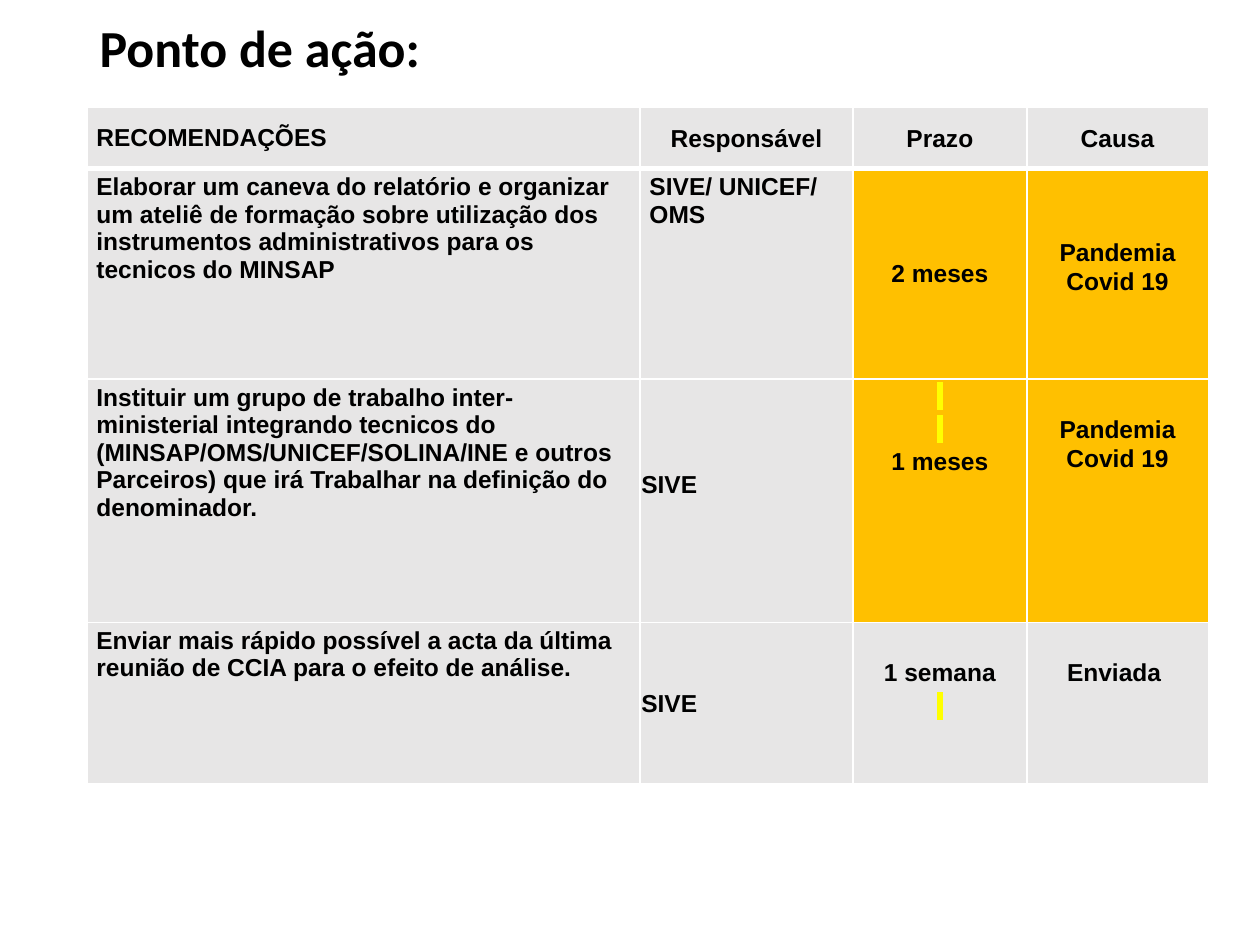
from lxml import etree
from pptx import Presentation
from pptx import util as u
from pptx.dml import color
from pptx.enum import text
from pptx.oxml import ns

COLORS = {"black": "000000", "white": "FFFFFF", "gray": "E7E6E6",
          "orange": "FFC000", "yellow": "FFFF00"}
MARK = "\N{NO-BREAK SPACE}"
LINE = 19.2
MIDDLE = text.MSO_ANCHOR.MIDDLE
TOP = text.MSO_ANCHOR.TOP


class ActionSlide:
    def __init__(self, presentation):
        self.slide = presentation.slides.add_slide(presentation.slide_layouts[5])

    def style_font(self, font, name, size):
        font.name = name
        font.size = u.Pt(size)
        font.bold = True
        font.color.rgb = color.RGBColor.from_string(COLORS["black"])

    def title(self, wording, left, top, width, height):
        shape = self.slide.shapes.title
        shape.left, shape.top = u.Pt(left), u.Pt(top)
        shape.width, shape.height = u.Pt(width), u.Pt(height)
        frame = shape.text_frame
        frame.text = wording
        frame.vertical_anchor = MIDDLE
        paragraph = frame.paragraphs[0]
        paragraph.alignment = text.PP_ALIGN.LEFT
        paragraph.line_spacing = 0.9
        self.style_font(paragraph.runs[0].font, "Calibri", 29.7)

    def table(self, left, top, widths, heights):
        frame = self.slide.shapes.add_table(
            len(heights), len(widths), u.Pt(left), u.Pt(top),
            u.Pt(sum(widths)), u.Pt(sum(heights)))
        for column, width in zip(frame.table.columns, widths):
            column.width = u.Pt(width)
        for row, height in zip(frame.table.rows, heights):
            row.height = u.Pt(height)
        return frame.table

    def borders(self, cell, top, bottom):
        properties = cell._tc.get_or_add_tcPr()
        sides = {"lnL": 1, "lnR": 1, "lnT": top, "lnB": bottom}
        for index, (side, width) in enumerate(sides.items()):
            line = etree.Element(ns.qn(f"a:{side}"), w=str(u.Pt(width)))
            fill = etree.SubElement(line, ns.qn("a:solidFill"))
            etree.SubElement(fill, ns.qn("a:srgbClr"), val=COLORS["white"])
            properties.insert(index, line)

    def highlight(self, run):
        mark = etree.Element(ns.qn("a:highlight"))
        etree.SubElement(mark, ns.qn("a:srgbClr"), val=COLORS["yellow"])
        run.font._element.find(ns.qn("a:solidFill")).addnext(mark)

    def cell(self, cell, wording, fill="gray", anchor=TOP, centered=True,
             padded=False, spacing=1.07, above=0, below=0):
        cell.fill.solid()
        cell.fill.fore_color.rgb = color.RGBColor.from_string(COLORS[fill])
        side, edge = (5.4, 2.7) if padded else (0.72, 0.72)
        cell.margin_left = cell.margin_right = u.Pt(side)
        cell.margin_top = u.Pt(edge + above * LINE)
        cell.margin_bottom = u.Pt(edge + below * LINE)
        cell.vertical_anchor = anchor
        cell.text_frame.text = wording
        for index, paragraph in enumerate(cell.text_frame.paragraphs):
            paragraph.alignment = text.PP_ALIGN.CENTER if centered else text.PP_ALIGN.LEFT
            paragraph.line_spacing = spacing
            if spacing > 1:
                paragraph.space_before = u.Pt(1 if index else 0)
                paragraph.space_after = u.Pt(1)
            for run in paragraph.runs:
                self.style_font(run.font, "Arial", 14)
                if run.text == MARK:
                    self.highlight(run)


def main():
    presentation = Presentation()
    presentation.slide_width, presentation.slide_height = u.Pt(720), u.Pt(540)
    page = ActionSlide(presentation)
    page.title("Ponto de ação:", 49.68, 10.8, 620.64, 36)

    padded = dict(centered=False, padded=True, spacing=1)
    header = dict(anchor=MIDDLE)
    owner = dict(anchor=MIDDLE, centered=False)
    orange = dict(fill="orange")
    rows = [
        [("RECOMENDAÇÕES", padded | header), ("Responsável", header),
         ("Prazo", header), ("Causa", header)],
        [("Elaborar um caneva do relatório e organizar um ateliê de formação sobre "
          "utilização dos instrumentos administrativos para os tecnicos do MINSAP", padded),
         ("SIVE/ UNICEF/ OMS", padded),
         ("2 meses", orange | dict(anchor=MIDDLE, spacing=1)),
         ("Pandemia Covid 19", orange | dict(above=2))],
        [("Instituir um grupo de trabalho inter-ministerial integrando tecnicos do "
          "(MINSAP/OMS/UNICEF/SOLINA/INE e outros Parceiros) que irá Trabalhar na "
          "definição do denominador.", padded),
         ("SIVE", owner | dict(below=1)),
         (f"{MARK}\n{MARK}\n1 meses", orange),
         ("Pandemia Covid 19", orange | dict(above=1))],
        [("Enviar mais rápido possível a acta da última reunião de CCIA para o "
          "efeito de análise.", padded),
         ("SIVE", owner),
         (f"1 semana\n{MARK}", dict(above=1)),
         ("Enviada ", dict(above=1))],
    ]
    table = page.table(49.68, 61.2, [316.08, 121.68, 99.36, 103.68],
                       [35.28, 120.24, 138.96, 92.16])
    for row_index, row in enumerate(rows):
        for column_index, (wording, options) in enumerate(row):
            cell = table.cell(row_index, column_index)
            page.cell(cell, wording, **options)
            page.borders(cell, 3 if row_index == 1 else 1, 3 if row_index == 0 else 1)

    presentation.save("out.pptx")


if __name__ == "__main__":
    main()
